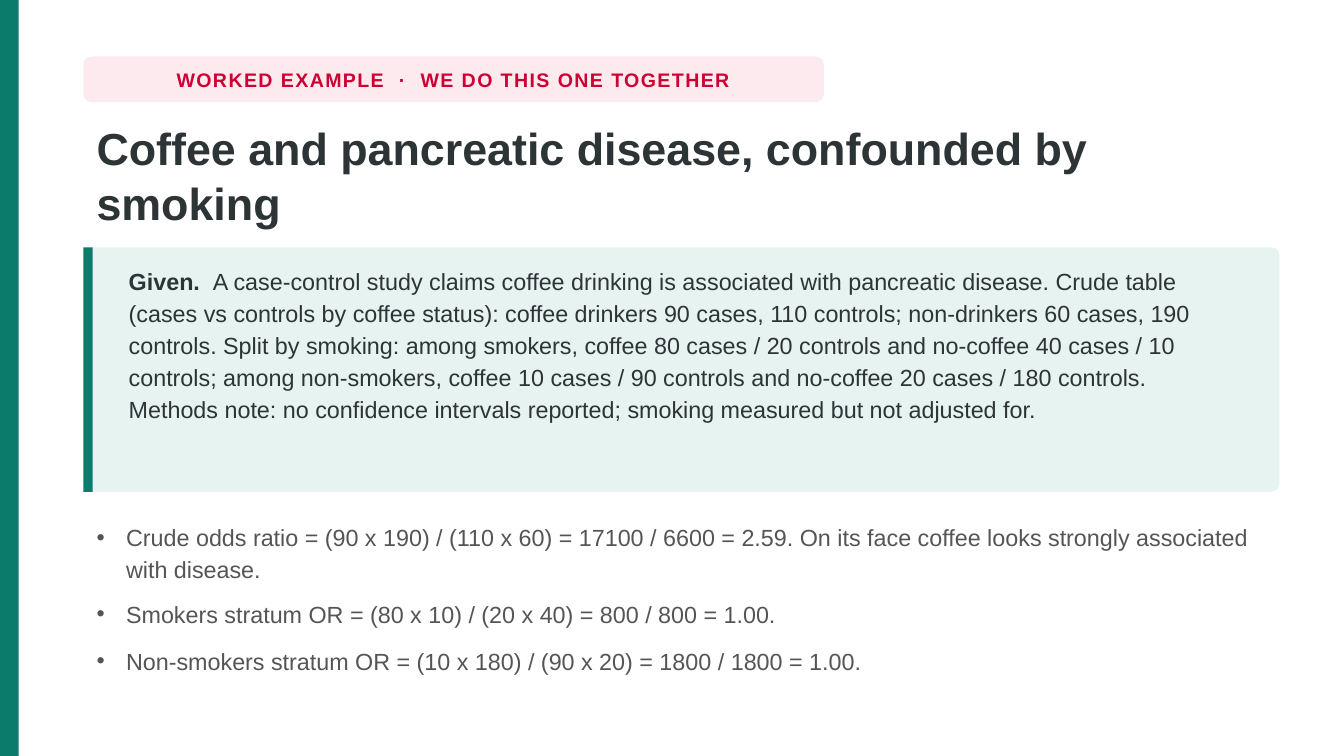
"""Build the worked example slide on coffee, smoking and pancreatic disease."""
from lxml.etree import SubElement
from pptx import Presentation
from pptx.dml.color import RGBColor
from pptx.enum.shapes import MSO_SHAPE
from pptx.enum.text import MSO_ANCHOR, PP_ALIGN
from pptx.oxml.ns import qn
from pptx.util import Inches, Pt

GREEN = RGBColor(0x0B, 0x7B, 0x6B)
MINT = RGBColor(0xE6, 0xF3, 0xF0)
PINK = RGBColor(0xFD, 0xEA, 0xEF)
RED = RGBColor(0xCC, 0x00, 0x33)
INK = RGBColor(0x2D, 0x34, 0x36)
GRAY = RGBColor(0x55, 0x55, 0x55)

WIDTH = 10
HEIGHT = WIDTH * 9 / 16
LEFT, CONTENT_WIDTH = 0.62, 8.9
BADGE = (LEFT, 0.42, 5.51, 0.34)
CARD_TOP, CARD_HEIGHT = 1.84, 1.82
BULLET_TOP, BULLET_GAP = 3.82, 0.08

GIVEN = (
    "A case-control study claims coffee drinking is associated with pancreatic disease. "
    "Crude table (cases vs controls by coffee status): coffee drinkers 90 cases, "
    "110 controls; non-drinkers 60 cases, 190 controls. Split by smoking: among smokers, "
    "coffee 80 cases / 20 controls and no-coffee 40 cases / 10 controls; among non-smokers, "
    "coffee 10 cases / 90 controls and no-coffee 20 cases / 180 controls. "
    "Methods note: no confidence intervals reported; smoking measured but not adjusted for."
)
BULLETS = [
    ("Crude odds ratio = (90 x 190) / (110 x 60) = 17100 / 6600 = 2.59. "
     "On its face coffee looks strongly associated with disease.", 0.49),
    ("Smokers stratum OR = (80 x 10) / (20 x 40) = 800 / 800 = 1.00.", 0.27),
    ("Non-smokers stratum OR = (10 x 180) / (90 x 20) = 1800 / 1800 = 1.00.", 0.27),
]


class SlideBuilder:
    font_name = "Arial"
    body_size = 12.5
    bullet_indent = Inches(0.22)

    def __init__(self, page):
        self.page = page

    def panel(self, area, color, radius=None):
        kind = MSO_SHAPE.RECTANGLE if radius is None else MSO_SHAPE.ROUNDED_RECTANGLE
        panel = self.page.shapes.add_shape(kind, *map(Inches, area))
        if radius is not None:
            panel.adjustments[0] = radius / min(area[2:])
        panel.shadow.inherit = False
        panel.fill.solid()
        panel.fill.fore_color.rgb = color
        panel.line.fill.background()

    def text(self, area, spans, size, color, wrap=True, anchor=MSO_ANCHOR.TOP, **layout):
        box = self.page.shapes.add_textbox(*map(Inches, area))
        box.text_frame.word_wrap = wrap
        box.text_frame.vertical_anchor = anchor
        para = box.text_frame.paragraphs[0]
        for name, value in layout.items():
            setattr(para, name, value)
        for words, bold in spans:
            span = para.add_run()
            span.text = words
            span.font.color.rgb = color
            formats = {"name": self.font_name, "size": Pt(size), "bold": bold}
            for name, value in formats.items():
                setattr(span.font, name, value)
        return para

    def badge(self, area, words):
        self.panel(area, PINK, radius=0.06)
        para = self.text(area, [(words, True)], 10.5, RED, wrap=False,
                         anchor=MSO_ANCHOR.MIDDLE, alignment=PP_ALIGN.CENTER)
        para.runs[0].font._element.set("spc", "80")

    def bullet(self, area, words):
        para = self.text(area, [(words, False)], self.body_size, GRAY, line_spacing=1.12)
        properties = para._p.get_or_add_pPr()
        properties.set("marL", str(self.bullet_indent))
        properties.set("indent", str(-self.bullet_indent))
        SubElement(properties, qn("a:buSzPct"), val="100000")
        SubElement(properties, qn("a:buFont"), typeface=self.font_name)
        SubElement(properties, qn("a:buChar"), char="•")


def main():
    deck = Presentation()
    deck.slide_width, deck.slide_height = Inches(WIDTH), Inches(HEIGHT)
    builder = SlideBuilder(deck.slides.add_slide(deck.slide_layouts[6]))

    builder.panel((0, 0, 0.14, HEIGHT), GREEN)
    builder.badge(BADGE, "WORKED EXAMPLE  ·  WE DO THIS ONE TOGETHER")
    title = "Coffee and pancreatic disease, confounded by smoking"
    builder.text((LEFT, 0.84, CONTENT_WIDTH, 1.02), [(title, True)], 24, INK,
                 line_spacing=1.02)

    builder.panel((LEFT, CARD_TOP, CONTENT_WIDTH, CARD_HEIGHT), MINT, radius=0.06)
    builder.panel((LEFT, CARD_TOP, 0.07, CARD_HEIGHT), GREEN)
    builder.text((0.86, 1.91, 8.4, 1.68), [("Given.  ", True), (GIVEN, False)],
                 builder.body_size, INK, line_spacing=1.14)

    top = BULLET_TOP
    for words, height in BULLETS:
        builder.bullet((LEFT, top, CONTENT_WIDTH, height), words)
        top += height + BULLET_GAP

    deck.save("out.pptx")


if __name__ == "__main__":
    main()
